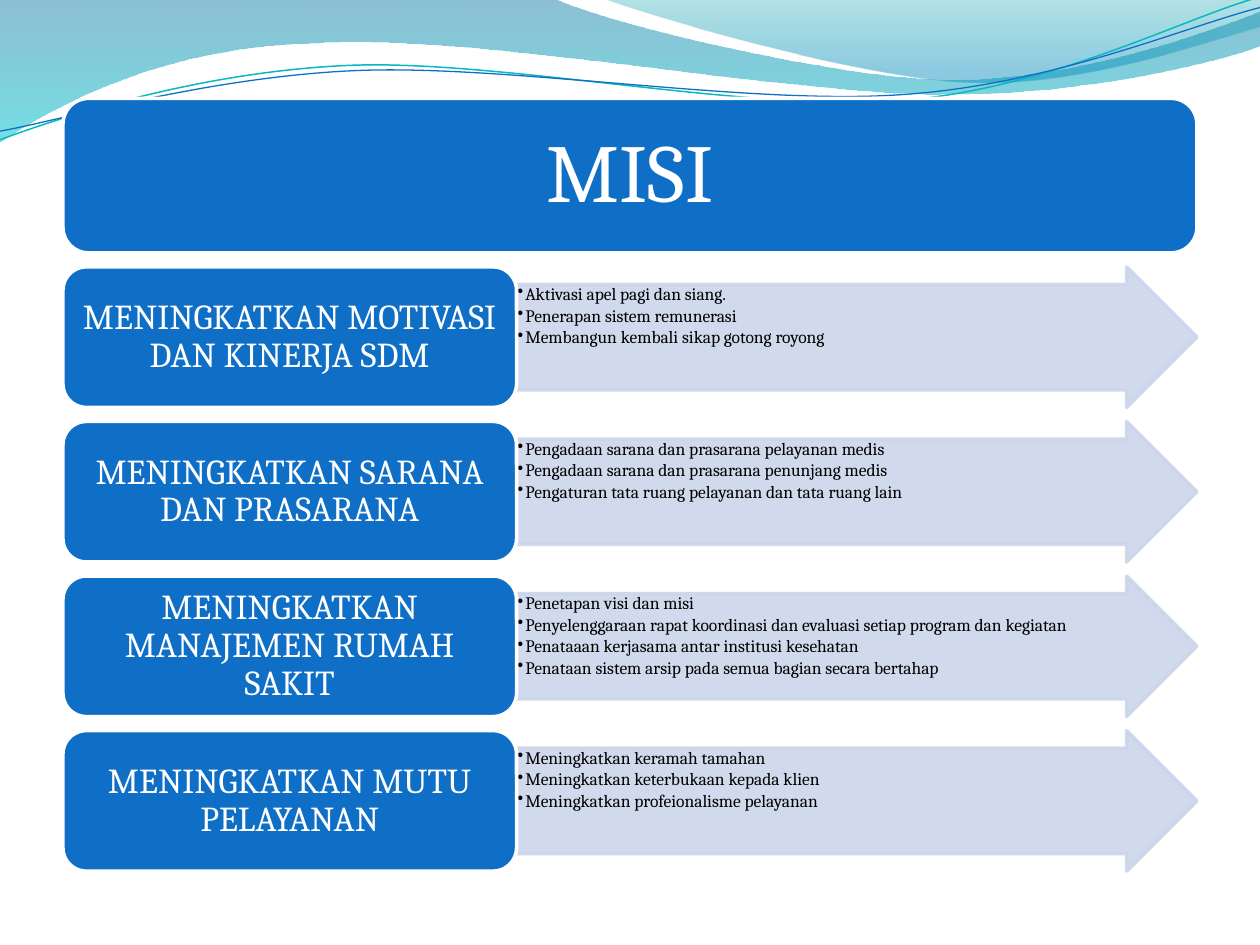
from lxml import etree
from pptx import Presentation
from pptx.dml.color import RGBColor
from pptx.enum.shapes import MSO_SHAPE as Kind
from pptx.enum.text import MSO_ANCHOR as Anchor, MSO_AUTO_SIZE as Fit, PP_ALIGN as Align
from pptx.oxml import parse_xml
from pptx.oxml.ns import nsdecls, qn
from pptx.util import Pt

BLUE = RGBColor(0x0F, 0x6F, 0xC6)
TEAL = RGBColor(0x0A, 0xB8, 0xBF)
PALE = RGBColor(0xCC, 0xD5, 0xEA)
WHITE = RGBColor(0xFF, 0xFF, 0xFF)
BLACK = RGBColor(0, 0, 0)
FONT = "Cambria"


def write(shape, *lines, size, color, align=Align.CENTER, anchor=Anchor.MIDDLE,
          pad=(0, 0), after=0, bullet=False):
    frame = shape.text_frame
    frame.word_wrap = True
    frame.auto_size = Fit.NONE
    frame.vertical_anchor = anchor
    frame.margin_left = frame.margin_right = Pt(pad[0])
    frame.margin_top = frame.margin_bottom = Pt(pad[1])
    for i, line in enumerate(lines):
        para = frame.add_paragraph() if i else frame.paragraphs[0]
        para.alignment = align
        para.line_spacing = 0.9
        para.space_before = Pt(0)
        para.space_after = Pt(after)
        run = para.add_run()
        run.text = line
        run.font.name = FONT
        run.font.size = Pt(size)
        run.font.color.rgb = color
        if bullet:
            para.level = 1
            props = para._p.get_or_add_pPr()
            props.set("marL", str(Pt(4.5)))
            props.set("indent", str(Pt(-4.5)))
            etree.SubElement(props, qn("a:buChar")).set("char", "•")


def block(kind, left, top, width, height, fill, line):
    shape = slide.shapes.add_shape(kind, Pt(left), Pt(top), Pt(width), Pt(height))
    shape.shadow.inherit = False
    shape.fill.solid()
    shape.fill.fore_color.rgb = fill
    shape.line.color.rgb = line
    shape.line.width = Pt(2)
    return shape


deck = Presentation()
deck.slide_width, deck.slide_height = Pt(720), Pt(540)
slide = deck.slides.add_slide(deck.slide_layouts[5])

# Waves at the top: pairs are straight steps, sixes are Bézier curves.
# Gradient stops are position, colour and opacity in percent.
waves = [
    ([(0, 0), (316.8, -0.7), (342.7, 12.2, 478.1, 45.4, 545.8, 45.4),
      (614.2, 45.4, 689.8, 18.7, 720, 6.5), (720.7, 25.9),
      (707.8, 31.7, 626.4, 54.7, 537.1, 54), (447.8, 54, 275, 20.2, 185, 24.5),
      (92.9, 25.9, 33.1, 59.8, -0.7, 81.4)],
     [(0, "0074A1", 45), (100, "00C6CF", 55)], None, 0),
    ([(344.9, -0.7), (366.5, 7.9, 491, 44.6, 553.7, 46.8),
      (616.3, 49.7, 691.9, 23, 720, 15.1), (720, 0)],
     [(0, "00A1A9", 30), (80, "008BBF", 45)], None, 0),
    ([(0, 79.9), (34.6, 67, 113.8, 41, 199.4, 37.4),
      (284.4, 33.8, 427, 64.1, 513.4, 57.6), (599.8, 51.1, 675.4, 10.8, 718.6, -1.4)],
     None, TEAL, 0.85),
    ([(0, 74.9), (33.8, 69.1, 118.1, 43.9, 203.8, 40.3),
      (290.2, 36.7, 429.8, 60.5, 516.2, 54), (601.9, 48.2, 677.5, 15.1, 720, 4.3)],
     None, BLUE, 0.75),
]
for path, stops, color, weight in waves:
    dots = [(Pt(x), Pt(y)) for part in path for x, y in zip(part[::2], part[1::2])]
    pen = slide.shapes.build_freeform(*dots[0])
    pen.add_line_segments(dots[1:], close=bool(stops))
    wave = pen.convert_to_shape()
    wave.shadow.inherit = False
    wave.fill.background()
    props = wave._element.spPr

    # Merge the three points of each curve into one Bézier segment
    legs = iter(list(props.iter(qn("a:lnTo"))))
    for part in path[1:]:
        leg = next(legs)
        if len(part) == 6:
            leg.addprevious(curve := etree.Element(qn("a:cubicBezTo")))
            for item in (leg, next(legs), next(legs)):
                curve.append(item[0])
                item.getparent().remove(item)

    if stops:
        wave.line.fill.background()
        marks = "".join(
            f'<a:gs pos="{pos * 1000}"><a:srgbClr val="{tint}">'
            f'<a:alpha val="{alpha * 1000}"/></a:srgbClr></a:gs>'
            for pos, tint, alpha in stops)
        blend = parse_xml(f'<a:gradFill {nsdecls("a")} rotWithShape="1"><a:gsLst>{marks}'
                          '</a:gsLst><a:lin ang="5400000" scaled="1"/></a:gradFill>')
        props.replace(props.find(qn("a:noFill")), blend)
    else:
        wave.line.color.rgb = color
        wave.line.width = Pt(weight)

# Title bar, with the title placed in front of it
block(Kind.ROUNDED_RECTANGLE, 36, 56.2, 648, 88.3, BLUE, WHITE)
title = slide.shapes.title
title.left, title.top, title.width, title.height = Pt(40.3), Pt(60.5), Pt(639.4), Pt(79.7)
write(title, "MISI", size=47, color=WHITE, pad=(14, 14))
slide.shapes._spTree.append(title._element)

# One row for each mission: heading on the left, actions in the arrow
rows = [
    ("MENINGKATKAN MOTIVASI DAN KINERJA SDM",
     ["Aktivasi apel pagi dan siang.",
      "Penerapan sistem remunerasi",
      "Membangun kembali sikap gotong royong"]),
    ("MENINGKATKAN SARANA DAN PRASARANA",
     ["Pengadaan sarana dan prasarana pelayanan medis",
      "Pengadaan sarana dan prasarana penunjang medis",
      "Pengaturan tata ruang pelayanan dan tata ruang lain"]),
    ("MENINGKATKAN MANAJEMEN RUMAH SAKIT",
     ["Penetapan visi dan misi",
      "Penyelenggaraan rapat koordinasi dan evaluasi setiap program dan kegiatan",
      "Penataaan kerjasama antar institusi kesehatan",
      "Penataan sistem arsip pada semua bagian secara bertahap"]),
    ("MENINGKATKAN MUTU PELAYANAN",
     ["Meningkatkan keramah tamahan",
      "Meningkatkan keterbukaan kepada klien",
      "Meningkatkan profeionalisme pelayanan"]),
]
HIGH = 80.3
for i, (head, acts) in enumerate(rows):
    top = 152.5 + i * HIGH * 1.1
    arrow = block(Kind.RIGHT_ARROW, 295.2, top, 388.8, HIGH, PALE, PALE)
    arrow.adjustments[0], arrow.adjustments[1] = 0.75, 0.5
    for tint in arrow._element.spPr.iter(qn("a:srgbClr")):
        etree.SubElement(tint, qn("a:alpha")).set("val", "90000")
    write(arrow, *acts, size=10, color=BLACK, align=Align.LEFT, anchor=Anchor.TOP,
          pad=(0.5, 0.5), after=1.5, bullet=True)
    box = block(Kind.ROUNDED_RECTANGLE, 36, top, 259.2, HIGH, BLUE, WHITE)
    write(box, head, size=20, color=WHITE, pad=(6, 3))

deck.save("out.pptx")
